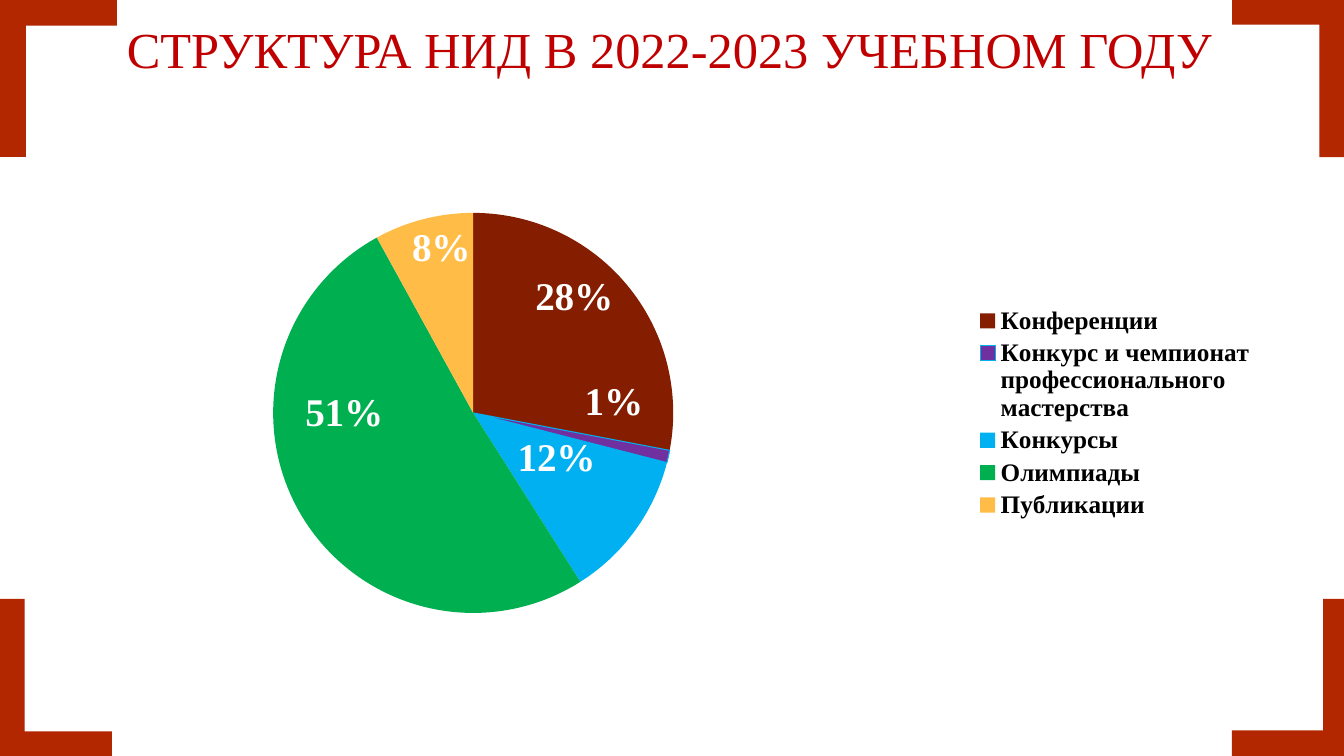
from math import cos, pi, sin

from lxml.etree import SubElement
from pptx import Presentation
from pptx.chart.data import CategoryChartData
from pptx.dml.color import RGBColor
from pptx.enum.chart import XL_CHART_TYPE, XL_LABEL_POSITION, XL_LEGEND_POSITION
from pptx.enum.shapes import MSO_SHAPE
from pptx.enum.text import MSO_ANCHOR, PP_ALIGN
from pptx.oxml import parse_xml
from pptx.oxml.ns import nsdecls, qn
from pptx.util import Pt

PX = 9071  # EMU per px, 100.8 px to the inch
SERIF = "Times New Roman"
BLACK = RGBColor(0x00, 0x00, 0x00)
WHITE = RGBColor(0xFF, 0xFF, 0xFF)
TITLE_RED = RGBColor(0xC0, 0x00, 0x00)
CORNER_RED = RGBColor(0xB2, 0x26, 0x00)
MAROON = RGBColor(0x85, 0x1D, 0x00)
PURPLE = RGBColor(0x70, 0x30, 0xA0)
BLUE = RGBColor(0x00, 0xB0, 0xF0)
GREEN = RGBColor(0x00, 0xB0, 0x50)
AMBER = RGBColor(0xFF, 0xBD, 0x47)

# Content: name, percent, colour, centre of the label in px
TITLE = "СТРУКТУРА НИД В 2022-2023 УЧЕБНОМ ГОДУ"
SLICES = [
    ("Конференции", 28, MAROON, (574, 298)),
    ("Конкурс и чемпионат профессионального мастерства", 1, PURPLE, (613, 402)),
    ("Конкурсы", 12, BLUE, (556, 458)),
    ("Олимпиады", 51, GREEN, (344, 413)),
    ("Публикации", 8, AMBER, (441, 248)),
]

# Places in px: left, top, width, height
CORNERS = [  # with rotation
    (0, 599, 112, 157, 0),
    (1232, 0, 112, 157, 180),
    (1212, 619, 157, 117, 270),
    (-20, 20, 157, 117, 90),
]
TITLE_BOX = (90, 20, 1159, 146)
CHART_BOX = (73, 166, 1193, 494)
PIE_CENTRE = (473, 413)
PIE_RADIUS = 200
PLOT_WIDTH = 664


def emu(*lengths):
    return [length * PX for length in lengths]


def manual_layout(**settings):
    layout = parse_xml(f"<c:layout {nsdecls('c')}/>")
    manual = SubElement(layout, qn("c:manualLayout"))
    for name, value in settings.items():
        SubElement(manual, qn(f"c:{name}")).set("val", str(value))
    return layout


def set_font(font, size, color, bold):
    font.name = SERIF
    font.size = Pt(size)
    font.bold = bold
    font.color.rgb = color


presentation = Presentation()
presentation.slide_width, presentation.slide_height = emu(1344, 756)
slide = presentation.slides.add_slide(presentation.slide_layouts[6])

# Corner brackets
for *box, rotation in CORNERS:
    shape = slide.shapes.add_shape(MSO_SHAPE.CORNER, *emu(*box))
    shape.rotation = rotation
    shape.adjustments[0] = shape.adjustments[1] = 0.22
    shape.shadow.inherit = False
    shape.fill.solid()
    shape.fill.fore_color.rgb = CORNER_RED
    shape.line.fill.background()

# Title
text_frame = slide.shapes.add_textbox(*emu(*TITLE_BOX)).text_frame
text_frame.word_wrap = True
text_frame.vertical_anchor = MSO_ANCHOR.TOP
text_frame.text = TITLE
paragraph = text_frame.paragraphs[0]
paragraph.alignment = PP_ALIGN.CENTER
paragraph.line_spacing = 0.9
set_font(paragraph.runs[0].font, 36, TITLE_RED, False)

# Pie chart
chart_data = CategoryChartData()
chart_data.categories = [name for name, *_ in SLICES]
chart_data.add_series("Series 1", [percent for _, percent, *_ in SLICES])
chart = slide.shapes.add_chart(XL_CHART_TYPE.PIE, *emu(*CHART_BOX), chart_data).chart
chart.has_title = False
chart.font.name = "Calibri"
chart.font.size = Pt(18)
chart.font.color.rgb = BLACK
chart.has_legend = True
chart.legend.position = XL_LEGEND_POSITION.RIGHT
chart.legend.include_in_layout = False
set_font(chart.legend.font, 18, BLACK, True)

# Plot area, centred on the pie
chart_left, chart_top, chart_width, chart_height = CHART_BOX
centre_x, centre_y = PIE_CENTRE
plot = chart.plots[0]
plot_area = plot._element.getparent()
for layout in plot_area.findall(qn("c:layout")):
    plot_area.remove(layout)
plot_area.insert(0, manual_layout(
    layoutTarget="inner", xMode="edge", yMode="edge",
    x=round((centre_x - PLOT_WIDTH / 2 - chart_left) / chart_width, 3),
    y=round((centre_y - PIE_RADIUS - chart_top) / chart_height, 3),
    w=round(PLOT_WIDTH / chart_width, 3),
    h=round(2 * PIE_RADIUS / chart_height, 3)))

# Slices and labels, each label moved from the middle of its slice
plot.vary_by_categories = True
series = plot.series[0]
total = sum(percent for _, percent, *_ in SLICES)
start = 0
for index, (_, percent, color, (label_x, label_y)) in enumerate(SLICES):
    point = series.points[index]
    point.format.fill.solid()
    point.format.fill.fore_color.rgb = color
    if color == PURPLE:
        point.format.line.color.rgb = BLUE
        point.format.line.width = Pt(0.75)
    else:
        point.format.line.fill.background()

    angle = 2 * pi * (start + percent / 2) / total
    start += percent
    shift_x = label_x - centre_x - PIE_RADIUS / 2 * sin(angle)
    shift_y = label_y - centre_y + PIE_RADIUS / 2 * cos(angle)
    set_font(point.data_label.font, 28, WHITE, True)
    point.data_label.position = XL_LABEL_POSITION.CENTER
    label = series.data_labels._element.findall(qn("c:dLbl"))[index]
    label.find(qn("c:showVal")).set("val", "0")
    label.find(qn("c:showPercent")).set("val", "1")
    label.find(qn("c:idx")).addnext(manual_layout(
        x=round(shift_x / chart_width, 3), y=round(shift_y / chart_height, 3)))

labels = series.data_labels
labels.show_value = False
labels.show_percentage = True
set_font(labels.font, 28, WHITE, True)

presentation.save("out.pptx")
